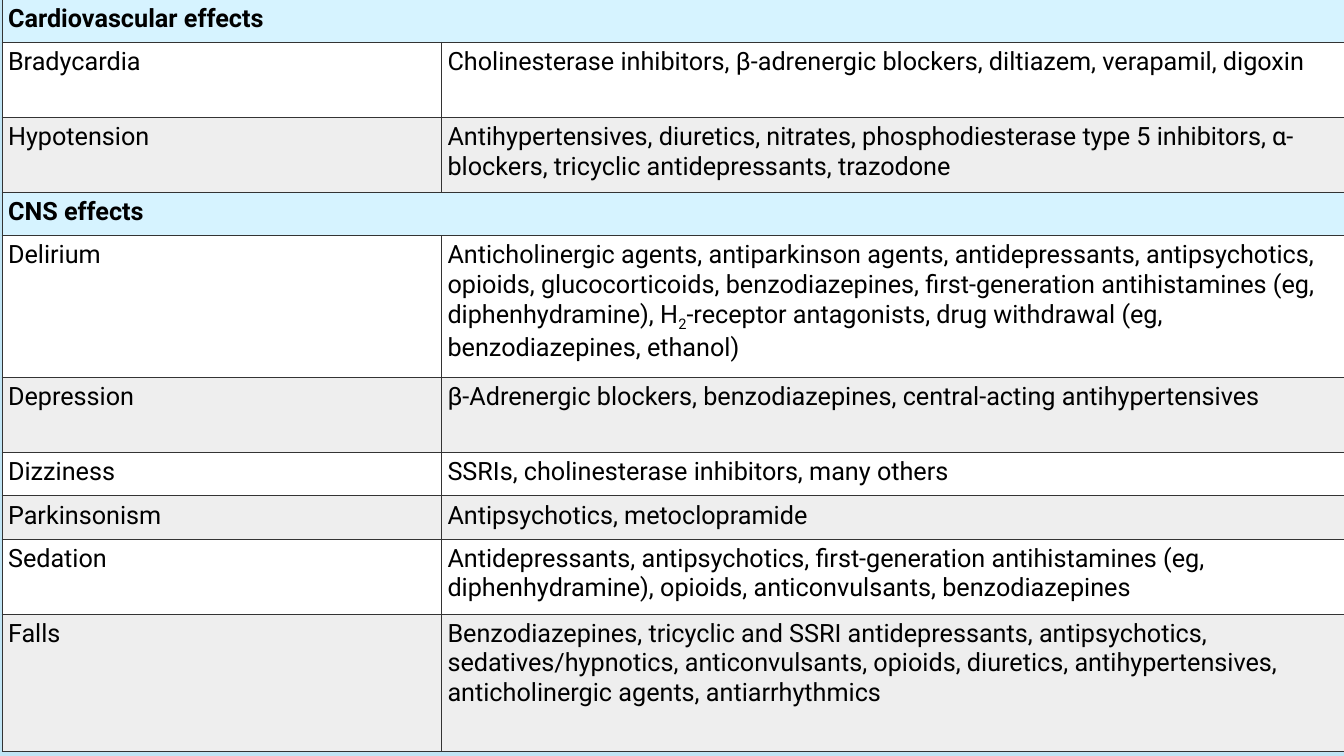
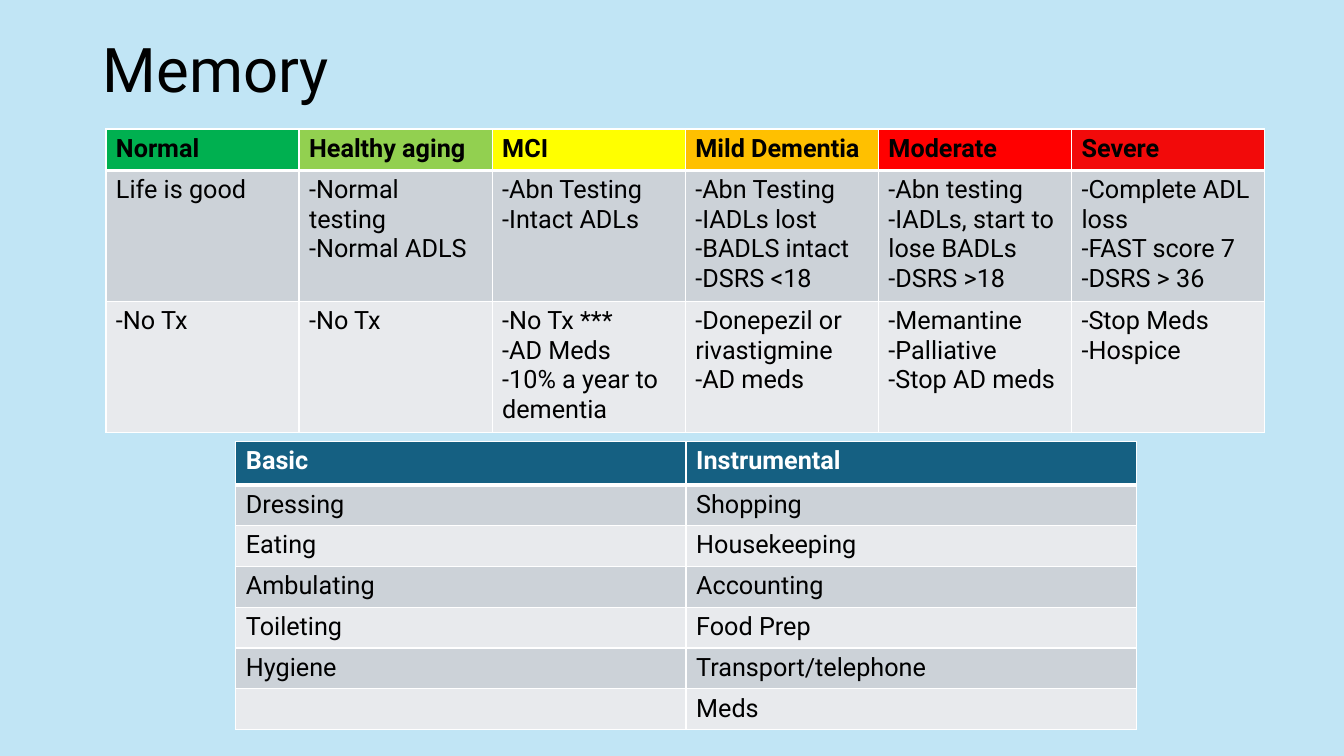
from dataclasses import dataclass
from itertools import cycle

from lxml import etree
from pptx import Presentation
from pptx import util as u
from pptx.dml.color import RGBColor
from pptx.enum import text as t
from pptx.oxml.ns import qn

SLIDE_WIDTH = u.Inches(13.33)
SLIDE_HEIGHT = u.Inches(7.5)


@dataclass(frozen=True)
class Theme:
    font: str = "Roboto"
    title_size: int = 44
    body_size: int = 18
    background: str = "C1E5F5"
    ink: str = "000000"
    white: str = "FFFFFF"
    rule: str = "333333"
    section: str = "D6F3FF"
    header: str = "156082"
    drug_stripes: tuple = ("FFFFFF", "EEEEEE")
    memory_stripes: tuple = ("CCD2D8", "E8EAED")


THEME = Theme()


@dataclass(frozen=True)
class Row:
    """A table row; height is a percentage of the slide height.

    Fills hold one colour per cell, and a single text spans the whole row.
    """
    texts: tuple
    height: float
    fills: tuple
    bold: bool = False
    color: str = THEME.ink
    rule_below: float = 0


@dataclass(frozen=True)
class Table:
    """Place and column widths are percentages of the slide's size."""
    left: float
    top: float
    columns: tuple
    rows: list
    border: str
    border_width: float
    margins: tuple = (0.1, 0.05, 0.1, 0.05)


@dataclass(frozen=True)
class Drugs:
    effect: str
    causes: str
    height: float


@dataclass(frozen=True)
class Stage:
    name: str
    color: str
    signs: str
    treatment: str


ONE_LINE, TWO_LINES = 5.73, 9.92

DRUG_SECTIONS = {
    "Cardiovascular effects": [
        Drugs("Bradycardia", "Cholinesterase inhibitors, β-adrenergic blockers, "
              "diltiazem, verapamil, digoxin", TWO_LINES),
        Drugs("Hypotension", "Antihypertensives, diuretics, nitrates, "
              "phosphodiesterase type 5 inhibitors, α-blockers, "
              "tricyclic antidepressants, trazodone", TWO_LINES),
    ],
    "CNS effects": [
        Drugs("Delirium", "Anticholinergic agents, antiparkinson agents, "
              "antidepressants, antipsychotics, opioids, glucocorticoids, "
              "benzodiazepines, first-generation antihistamines (eg, "
              "diphenhydramine), H~2~-receptor antagonists, drug withdrawal "
              "(eg, benzodiazepines, ethanol)", 18.78),
        Drugs("Depression", "β-Adrenergic blockers, benzodiazepines, "
              "central-acting antihypertensives", TWO_LINES),
        Drugs("Dizziness", "SSRIs, cholinesterase inhibitors, many others", ONE_LINE),
        Drugs("Parkinsonism", "Antipsychotics, metoclopramide", ONE_LINE),
        Drugs("Sedation", "Antidepressants, antipsychotics, first-generation "
              "antihistamines (eg, diphenhydramine), opioids, anticonvulsants, "
              "benzodiazepines", TWO_LINES),
        Drugs("Falls", "Benzodiazepines, tricyclic and SSRI antidepressants, "
              "antipsychotics, sedatives/hypnotics, anticonvulsants, opioids, "
              "diuretics, antihypertensives, anticholinergic agents, "
              "antiarrhythmics", 18.25),
    ],
}

STAGES = [
    Stage("Normal", "00B050", "Life is good", "-No Tx"),
    Stage("Healthy aging", "92D050", "-Normal testing\n-Normal ADLS", "-No Tx"),
    Stage("MCI", "FFFF00", "-Abn Testing\n-Intact ADLs",
          "-No Tx ***\n-AD Meds\n-10% a year to dementia"),
    Stage("Mild Dementia", "FFC000",
          "-Abn Testing\n-IADLs lost\n-BADLS intact\n-DSRS <18",
          "-Donepezil or rivastigmine\n-AD meds"),
    Stage("Moderate", "FF0000",
          "-Abn testing\n-IADLs, start to lose BADLs\n-DSRS >18",
          "-Memantine\n-Palliative\n-Stop AD meds"),
    Stage("Severe", "F20A0A", "-Complete ADL loss\n-FAST score 7\n-DSRS > 36",
          "-Stop Meds\n-Hospice"),
]

DAILY_ACTIVITIES = [
    ("Dressing", "Shopping"),
    ("Eating", "Housekeeping"),
    ("Ambulating", "Accounting"),
    ("Toileting", "Food Prep"),
    ("Hygiene", "Transport/telephone"),
    ("", "Meds"),
]


def across(percent: float) -> u.Emu:
    return u.Emu(round(SLIDE_WIDTH * percent / 100))


def down(percent: float) -> u.Emu:
    return u.Emu(round(SLIDE_HEIGHT * percent / 100))


def write(frame, content: str, size: int, color: str, bold: bool = False) -> None:
    """Fill a frame, one paragraph a line, with subscripts between tildes."""
    for number, line in enumerate(content.split("\n")):
        para = frame.add_paragraph() if number else frame.paragraphs[0]
        for index, part in enumerate(line.split("~")):
            if not part:
                continue
            span = para.add_run()
            span.text = part
            if index % 2:
                span.font._element.set("baseline", "-25000")
        para.font.name = THEME.font
        para.font.size = u.Pt(size)
        para.font.bold = bold
        para.font.color.rgb = RGBColor.from_string(color)


def set_borders(cell, color: str, width: float, above: float, below: float) -> None:
    properties = cell._tc.get_or_add_tcPr()
    sides = {"lnL": width, "lnR": width, "lnT": above, "lnB": below}
    for side, points in sides.items():
        line = etree.SubElement(properties, qn(f"a:{side}"), w=str(u.Pt(points)))
        fill = etree.SubElement(line, qn("a:solidFill"))
        etree.SubElement(fill, qn("a:srgbClr"), val=color)


def draw_table(page, table: Table) -> None:
    frame = page.shapes.add_table(
        len(table.rows), len(table.columns), across(table.left), down(table.top),
        across(sum(table.columns)), down(sum(row.height for row in table.rows)))
    grid = frame.table
    grid.first_row = grid.horz_banding = False
    for column, width in zip(grid.columns, table.columns):
        column.width = across(width)

    above = table.border_width
    for grid_row, row in zip(grid.rows, table.rows):
        grid_row.height = down(row.height)
        below = row.rule_below or table.border_width
        cells = list(grid_row.cells)
        for cell, color in zip(cells, row.fills):
            set_borders(cell, table.border, table.border_width, above, below)
            cell.fill.solid()
            cell.fill.fore_color.rgb = RGBColor.from_string(color)
            (cell.margin_left, cell.margin_top, cell.margin_right,
             cell.margin_bottom) = map(u.Inches, table.margins)
        if len(row.texts) == 1:
            cells[0].merge(cells[-1])
        for cell, content in zip(cells, row.texts):
            write(cell.text_frame, content, THEME.body_size, row.color, row.bold)
        above = below


def draw_title(page, content: str) -> None:
    box = page.shapes.add_textbox(across(6.9), 0, across(86.26), down(19.33))
    frame = box.text_frame
    frame.word_wrap = True
    frame.vertical_anchor = t.MSO_ANCHOR.MIDDLE
    write(frame, content, THEME.title_size, THEME.ink)
    frame.paragraphs[0].line_spacing = 0.9


def add_page(deck):
    page = deck.slides.add_slide(deck.slide_layouts[6])
    page.background.fill.solid()
    page.background.fill.fore_color.rgb = RGBColor.from_string(THEME.background)
    return page


def drug_table() -> Table:
    rows = []
    for section, drugs in DRUG_SECTIONS.items():
        rows.append(Row((section,), ONE_LINE, (THEME.section,) * 2, bold=True))
        rows += [Row((drug.effect, drug.causes), drug.height, (stripe,) * 2)
                 for drug, stripe in zip(drugs, cycle(THEME.drug_stripes))]
    return Table(0.15, -0.13, (32.7, 67.15), rows, THEME.rule, 0.75,
                 margins=(0.06, 0.05, 0.05, 0.05))


def stage_table() -> Table:
    count = len(STAGES)
    header = Row(tuple(stage.name for stage in STAGES), 5.47,
                 tuple(stage.color for stage in STAGES), bold=True, rule_below=3)
    contents = (tuple(stage.signs for stage in STAGES),
                tuple(stage.treatment for stage in STAGES))
    body = [Row(texts, 16.93, (stripe,) * count)
            for texts, stripe in zip(contents, THEME.memory_stripes)]
    return Table(7.88, 17.07, (14.37,) * count, [header, *body], THEME.white, 1)


def activity_table() -> Table:
    header = Row(("Basic", "Instrumental"), ONE_LINE, (THEME.header,) * 2,
                 bold=True, color=THEME.white, rule_below=3)
    body = [Row(texts, 5.4, (stripe,) * 2)
            for texts, stripe in zip(DAILY_ACTIVITIES, cycle(THEME.memory_stripes))]
    return Table(17.55, 58.4, (33.5,) * 2, [header, *body], THEME.white, 1)


def main() -> None:
    deck = Presentation()
    deck.slide_width, deck.slide_height = SLIDE_WIDTH, SLIDE_HEIGHT

    draw_table(add_page(deck), drug_table())

    memory = add_page(deck)
    draw_title(memory, "Memory")
    draw_table(memory, stage_table())
    draw_table(memory, activity_table())

    deck.save("out.pptx")


if __name__ == "__main__":
    main()
